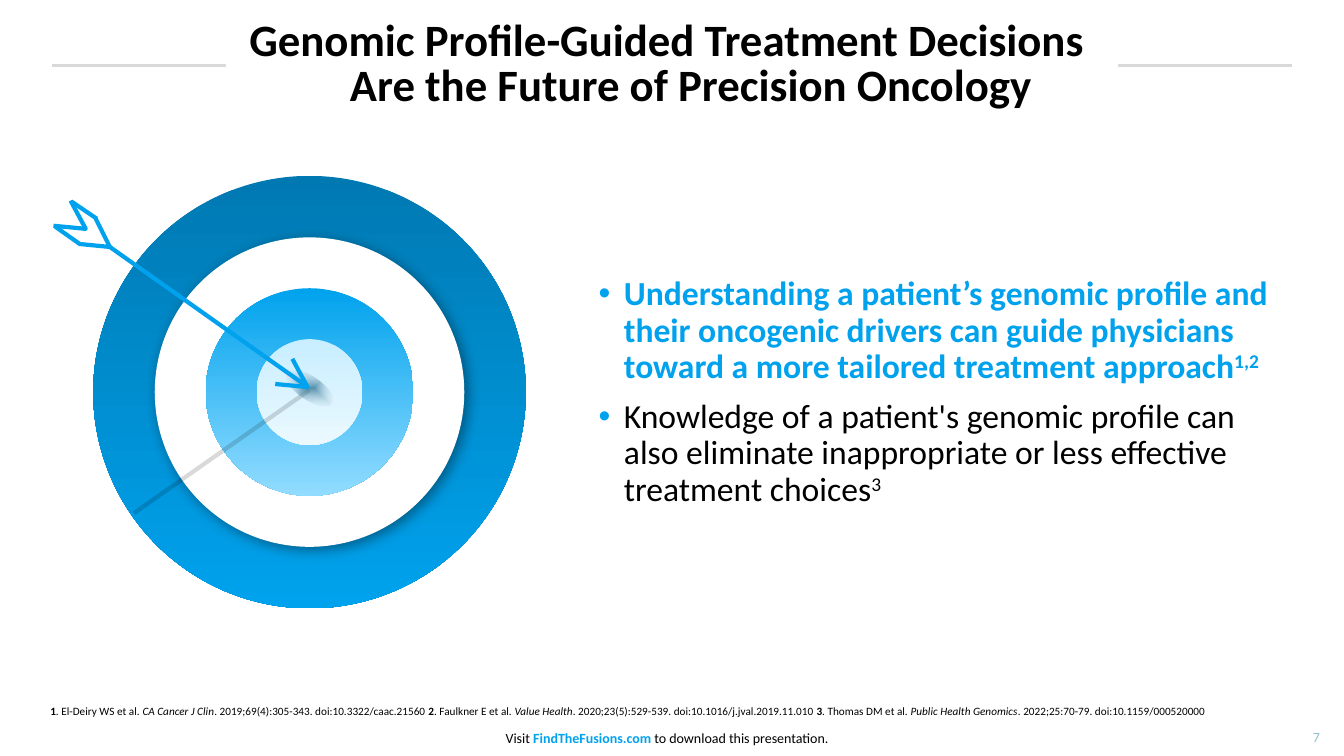
from lxml.etree import SubElement
from pptx import Presentation
from pptx.dml.color import RGBColor
from pptx.enum.shapes import MSO_CONNECTOR, MSO_SHAPE
from pptx.enum.text import MSO_ANCHOR, PP_ALIGN
from pptx.oxml import parse_xml
from pptx.oxml.ns import nsdecls, qn
from pptx.util import Inches, Pt

THEME = {
    "font": "Calibri", "blue": "00A2ED", "black": "000000", "white": "FFFFFF",
    "rule": "D9D9D9", "page": "8FC0CF", "shade": "005176",
    "title": 32, "body": 24, "foot": 10, "refs": 8,
}
TITLE = "Genomic Profile-Guided Treatment Decisions \vAre the Future of Precision Oncology"
POINTS = [
    ("Understanding a patient’s genomic profile and their oncogenic drivers can guide "
     "physicians toward a more tailored treatment approach", "1,2", "blue", True),
    ("Knowledge of a patient's genomic profile can also eliminate inappropriate or less "
     "effective treatment choices", "3", "black", False),
]
REFS = [
    ("1", "El-Deiry WS et al. ", "CA Cancer J Clin",
     ". 2019;69(4):305-343. doi:10.3322/caac.21560 "),
    ("2", "Faulkner E et al. ", "Value Health",
     ". 2020;23(5):529-539. doi:10.1016/j.jval.2019.11.010 "),
    ("3", "Thomas DM et al. ", "Public Health Genomics",
     ". 2022;25:70-79. doi:10.1159/000520000"),
]
VISIT = ("Visit ", "FindTheFusions.com", " to download this presentation.")
CENTER = (3.07, 3.89)
RINGS = [
    (4.29, ("0079B2", "00A2ED")),
    (3.07, None),
    (2.06, ("00A2ED", "92DCFF")),
    (1.05, ("C8EEFF", "EBF9FF")),
]
CAST = ((1.33, 5.09), (3.07, 3.87))
ARROW = [
    ((1.09, 2.45), (3.04, 3.83)),
    ((0.96, 2.17), (0.71, 2.0)),
    ((0.79, 2.42), (0.55, 2.25)),
]
BARBS = [
    ((0.7, 1.99), (0.85, 2.27), (0.53, 2.24)),
    ((0.95, 2.17), (1.09, 2.45), (0.78, 2.42)),
    ((2.9, 3.56), (3.05, 3.84), (2.73, 3.81)),
]


def tint(name):
    return RGBColor.from_string(THEME.get(name, name))


def add_box(slide, at, anchor, sides=(0.1, 0.1)):
    box = slide.shapes.add_textbox(*map(Inches, at))
    frame = box.text_frame
    frame.word_wrap = True
    frame.vertical_anchor = anchor
    frame.margin_left, frame.margin_right = map(Inches, sides)
    return box, frame.paragraphs[0]


def style(para, size, color, bold=None):
    font = para.font
    font.name, font.size, font.bold = THEME["font"], Pt(THEME[size]), bold
    font.color.rgb = tint(color)


def add_run(para, text, bold=None, italic=None):
    run = para.add_run()
    run.text = text
    run.font.bold, run.font.italic = bold, italic
    return run


def hang(para, inch):
    props = para._p.get_or_add_pPr()
    props.set("marL", str(Inches(inch)))
    props.set("indent", str(-Inches(inch)))
    return props


def add_line(slide, ends, color="blue", width=3, alpha=None):
    start, end = ends
    line = slide.shapes.add_connector(
        MSO_CONNECTOR.STRAIGHT, *map(Inches, start + end))
    line.line.color.rgb = tint(color)
    line.line.width = Pt(width)
    SubElement(line._element.spPr, qn("a:effectLst"))
    if alpha:
        clr = line._element.spPr.find(".//" + qn("a:srgbClr"))
        SubElement(clr, qn("a:alpha")).set("val", str(alpha * 1000))


def add_oval(slide, mid, wide, high):
    at = (mid[0] - wide / 2, mid[1] - high / 2, wide, high)
    oval = slide.shapes.add_shape(MSO_SHAPE.OVAL, *map(Inches, at))
    oval.shadow.inherit = False
    oval.line.fill.background()
    return oval


def add_ring(slide, size, colors):
    ring = add_oval(slide, CENTER, size, size)
    if colors:
        ring.fill.gradient()
        ring.fill.gradient_angle = 270
        for stop, color in zip(ring.fill.gradient_stops, colors):
            stop.color.rgb = tint(color)
        return
    ring.fill.solid()
    ring.fill.fore_color.rgb = tint("white")
    glow = ring._element.spPr.find(qn("a:effectLst"))
    glow.append(parse_xml(
        f'<a:outerShdw {nsdecls("a")} blurRad="{Pt(10)}" dist="{Pt(3)}" '
        f'dir="{45 * 60000}" algn="tl" rotWithShape="0">'
        f'<a:srgbClr val="{THEME["black"]}"><a:alpha val="40000"/></a:srgbClr>'
        '</a:outerShdw>'))


def add_spot(slide):
    spot = add_oval(slide, (3.07, 3.85), 0.53, 0.23)
    spot.rotation = 213.7
    spot.fill.background()
    props = spot._element.spPr
    stops = "".join(
        f'<a:gs pos="{pos}"><a:srgbClr val="{THEME[name]}">'
        f'<a:alpha val="{alpha}"/></a:srgbClr></a:gs>'
        for pos, name, alpha in ((0, "shade", 61000), (100000, "white", 0)))
    props.replace(props.find(qn("a:noFill")), parse_xml(
        f'<a:gradFill {nsdecls("a")} rotWithShape="1"><a:gsLst>{stops}</a:gsLst>'
        '<a:path path="shape"><a:fillToRect l="50000" t="50000" r="50000" b="50000"/>'
        '</a:path></a:gradFill>'))


def add_barb(slide, points):
    first, *rest = [tuple(map(Inches, point)) for point in points]
    pen = slide.shapes.build_freeform(*first)
    pen.add_line_segments(rest, close=False)
    barb = pen.convert_to_shape()
    barb.shadow.inherit = False
    barb.fill.background()
    barb.line.color.rgb = tint("blue")
    barb.line.width = Pt(3)


def add_title(slide):
    box, para = add_box(slide, (2.24, 0.15, 8.85, 1), MSO_ANCHOR.MIDDLE, (0.2, 0.2))
    box.fill.solid()
    box.fill.fore_color.rgb = tint("white")
    para.text = TITLE
    para.alignment = PP_ALIGN.CENTER
    para.line_spacing = Pt(32)
    hang(para, 0.38)
    style(para, "title", "black", True)


def add_points(slide):
    box, para = add_box(slide, (5.84, 2.2, 7.03, 3.39), MSO_ANCHOR.MIDDLE)
    for row, (text, note, color, bold) in enumerate(POINTS):
        if row:
            para = box.text_frame.add_paragraph()
            para.space_before = Pt(10)
        para.line_spacing = 0.9
        props = hang(para, 0.25)
        dot = SubElement(props, qn("a:buClr"))
        SubElement(dot, qn("a:srgbClr")).set("val", THEME["blue"])
        SubElement(props, qn("a:buFont")).set("typeface", "Arial")
        SubElement(props, qn("a:buChar")).set("char", "•")
        style(para, "body", color, bold)
        add_run(para, text)
        add_run(para, note)._r.get_or_add_rPr().set("baseline", "30000")


def add_foot(slide):
    box, para = add_box(slide, (13.02, 7.17, 0.31, 0.27), MSO_ANCHOR.BOTTOM, (0, 0))
    para.text = "7"
    style(para, "foot", "page")
    box, para = add_box(slide, (0.4, 6.18, 12.49, 0.99), MSO_ANCHOR.BOTTOM)
    style(para, "refs", "black")
    for mark, names, source, cite in REFS:
        add_run(para, mark, bold=True)
        add_run(para, ". " + names)
        add_run(para, source, italic=True)
        add_run(para, cite)
    box, para = add_box(slide, (0, 7.18, 13.33, 0.27), MSO_ANCHOR.BOTTOM, (0, 0.1))
    para.alignment = PP_ALIGN.CENTER
    style(para, "foot", "black")
    before, site, after = VISIT
    add_run(para, before)
    add_run(para, site, bold=True).font.color.rgb = tint("blue")
    add_run(para, after)


def main():
    deck = Presentation()
    deck.slide_width, deck.slide_height = Inches(13.33), Inches(7.5)
    slide = deck.slides.add_slide(deck.slide_layouts[6])
    add_line(slide, ((0.52, 0.65), (12.81, 0.65)), "rule", 1.5)
    add_title(slide)
    add_foot(slide)
    add_points(slide)
    for size, colors in RINGS:
        add_ring(slide, size, colors)
    add_line(slide, CAST, "black", 3, 15)
    add_spot(slide)
    for ends in ARROW:
        add_line(slide, ends)
    for points in BARBS:
        add_barb(slide, points)
    deck.save("out.pptx")


if __name__ == "__main__":
    main()
